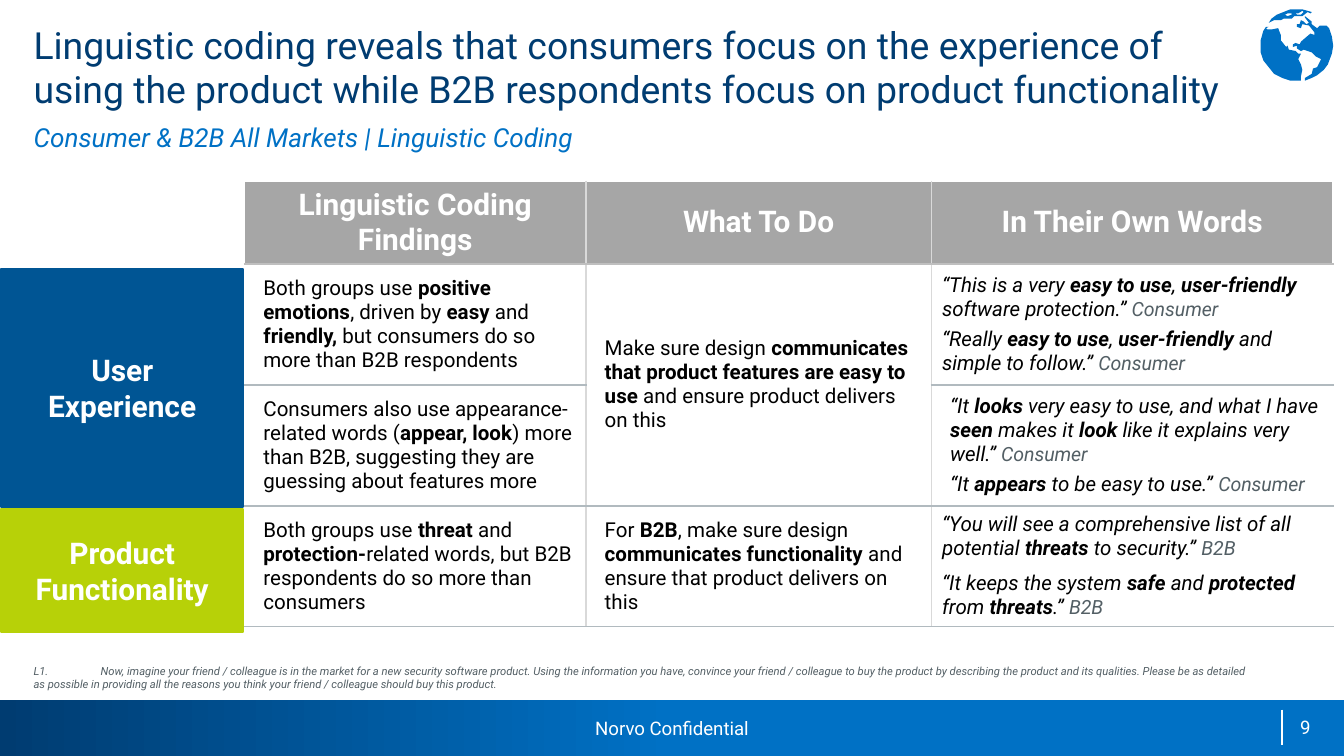
from lxml import etree
from pptx import Presentation
from pptx.dml.color import RGBColor
from pptx.enum.shapes import MSO_CONNECTOR, MSO_SHAPE
from pptx.enum.text import MSO_ANCHOR, PP_ALIGN
from pptx.oxml.ns import qn
from pptx.util import Inches, Pt

RECT, LINE = MSO_SHAPE.RECTANGLE, MSO_CONNECTOR.STRAIGHT
TOP, MID, LOW = MSO_ANCHOR.TOP, MSO_ANCHOR.MIDDLE, MSO_ANCHOR.BOTTOM
LEFT, CENTER, RIGHT = PP_ALIGN.LEFT, PP_ALIGN.CENTER, PP_ALIGN.RIGHT

THEME = dict(
    font="Roboto", navy="003C71", blue="0071C5", deep="005594", lime="B7D108",
    head="A6A6A6", side="D9D9D9", rule="B1BABF", under="BFBFBF",
    grey="535F65", white="FFFFFF", black="000000",
    title=20, sub=14, label=16, body=11, source=10.5, foot=10, note=6)

TITLE = ("Linguistic coding reveals that consumers focus on the experience of "
         "using the product while B2B respondents focus on product functionality")
SUB = "Consumer & B2B All Markets | Linguistic Coding"
NOTE = ["L1.\tNow, imagine your friend / colleague is in the market for a new security "
        "software product. Using the information you have, convince your friend / "
        "colleague to buy the product by describing the product and its qualities. "
        "Please be as detailed",
        "as possible in providing all the reasons you think your friend / colleague "
        "should buy this product."]
FOOT, PAGE = "Norvo Confidential", "9"

# label, top, height, colour
GROUPS = [("User Experience", 2, 1.77, "deep"),
          ("Product Functionality", 3.79, 0.91, "lime")]

HEADS = ["Linguistic Coding Findings", "What To Do", "In Their Own Words"]
COLS, ROWS = [2.54, 2.57, 2.99], [0.61, 0.9, 0.9, 0.9]

# Every second piece of a text is bold.
FINDINGS = [
    ["Both groups use ", "positive emotions", ", driven by ", "easy ", "and ",
     "friendly, ", "but consumers do so more than B2B respondents"],
    ["Consumers also use appearance- related words (", "appear, look",
     ") more than B2B, suggesting they are guessing about features more"],
    ["Both groups use ", "threat ", "and ", "protection-",
     "related words, but B2B respondents do so more than consumers"]]
ACTIONS = {
    1: ["Make sure design ", "communicates that product features are easy to use ",
        "and ensure product delivers on this"],
    3: ["For ", "B2B", ", make sure design ", "communicates functionality",
        " and ensure that product delivers on this"]}
# indent, space before, quotes with their speaker
QUOTES = [
    (0, 3, [(["“This is a very ", "easy to use", ", ", "user-friendly ",
              "software protection.”"], " Consumer"),
            (["“Really ", "easy to use", ", ", "user-friendly",
              " and simple to follow.” "], "Consumer")]),
    (0.06, 3, [(["“It ", "looks", " very easy to use, and what I have ", "seen",
                 " makes it ", "look", " like it explains very well.”"], " Consumer"),
               (["“It ", "appears", " to be easy to use.” "], "Consumer")]),
    (0, 6, [(["“You will see a comprehensive list of all potential ", "threats ",
              "to security.” "], "B2B"),
            (["“It keeps the system ", "safe", " and ", "protected", " from ",
              "threats", ".” "], "B2B")])]

# Outlines of the globe's land, in hundredths of an inch
GLOBE = [
    [[(971, 12), (976, 16), (976, 18), (980, 21), (982, 19), (987, 19), (989, 21),
      (991, 27), (992, 34), (991, 40), (988, 48), (985, 52), (980, 56), (976, 58),
      (971, 60), (971, 58), (976, 55), (977, 51), (980, 50), (983, 44), (979, 42),
      (976, 39), (970, 37), (968, 38), (965, 36), (965, 34), (962, 35), (962, 33),
      (964, 32), (967, 33), (968, 31), (975, 25), (978, 26), (978, 24), (974, 19),
      (969, 18), (968, 21), (965, 20), (965, 18), (967, 18), (968, 15), (970, 16),
      (972, 18), (974, 17), (971, 13)]],
    [[(944, 20), (942, 21), (943, 22), (946, 22), (951, 21), (953, 26), (953, 30),
      (957, 35), (958, 34), (959, 37), (964, 38), (966, 40), (968, 40), (966, 44),
      (968, 48), (969, 52), (968, 57), (968, 60), (960, 60), (954, 58), (948, 55),
      (944, 50), (940, 45), (938, 39), (938, 30), (940, 23), (942, 20)]],
    [[(958, 10), (956, 11), (958, 12), (961, 11), (961, 10)],
     [(969, 8), (966, 10), (964, 10), (965, 11), (968, 11), (970, 9)],
     [(965, 7), (969, 7), (976, 9), (975, 10), (973, 9), (969, 12), (963, 12),
      (961, 14), (955, 14), (953, 15), (948, 15), (944, 17), (946, 14), (950, 11),
      (955, 9), (960, 7)]]]


def rgb(name):
    return RGBColor.from_string(THEME[name])


def put(par, text, size, color, bold=False, italic=False):
    run = par.add_run()
    run.text = text
    font = run.font
    font.name, font.size = THEME["font"], Pt(THEME[size])
    font.bold, font.italic = bold, italic
    font.color.rgb = rgb(color)


def weave(par, parts, italic=False):
    """Add the parts, bold at every second one."""
    for i, part in enumerate(parts):
        put(par, part, "body", "black", i % 2 == 1, italic)


def frame(shape, anchor, pad):
    text = shape.text_frame
    text.word_wrap, text.vertical_anchor = True, anchor
    text.margin_left = text.margin_right = Inches(pad[0])
    text.margin_top = text.margin_bottom = Inches(pad[1])
    return text.paragraphs[0]


def label(slide, box, text, size, color, anchor=MID, align=LEFT, pad=(0, 0), italic=False):
    par = frame(slide.shapes.add_textbox(*map(Inches, box)), anchor, pad)
    par.alignment = align
    put(par, text, size, color, italic=italic)
    return par


def block(slide, box):
    shape = slide.shapes.add_shape(RECT, *map(Inches, box))
    shape.shadow.inherit = False
    return shape


def edge(cell, side, color):
    line = etree.SubElement(cell._tc.get_or_add_tcPr(), qn("a:" + side), w=str(Pt(1)))
    fill = etree.SubElement(line, qn("a:solidFill"))
    etree.SubElement(fill, qn("a:srgbClr"), val=THEME[color])


def indent(par, size):
    par._p.get_or_add_pPr().set("marL", str(Inches(size)))


def add_footer(slide):
    bar = block(slide, (0, 5.21, 10, 0.42))
    bar.line.fill.background()
    bar.fill.gradient()
    bar.fill.gradient_angle = 0
    for stop, color, spot in zip(bar.fill.gradient_stops, ("navy", "blue"), (0, 0.5)):
        stop.color.rgb, stop.position = rgb(color), spot
    rule = slide.shapes.add_connector(LINE, *map(Inches, (9.54, 5.28, 9.54, 5.54)))
    rule.line.color.rgb, rule.line.width = rgb("white"), Pt(0.75)
    etree.SubElement(rule._element.spPr, qn("a:effectLst"))
    label(slide, (3.25, 5.21, 3.5, 0.41), FOOT, "foot", "white", align=CENTER)
    label(slide, (7.52, 5.28, 2.33, 0.3), PAGE, "foot", "white", TOP, RIGHT, (0.1, 0.05))


def add_note(slide):
    par = label(slide, (0.25, 4.81, 9.5, 0.33), NOTE[0], "note", "grey", LOW, italic=True)
    tabs = etree.SubElement(par._p.get_or_add_pPr(), qn("a:tabLst"))
    etree.SubElement(tabs, qn("a:tab"), pos=str(Inches(0.5)), algn="l")
    par.add_line_break()
    put(par, NOTE[1], "note", "grey", italic=True)


def add_groups(slide):
    for text, top, high, color in GROUPS:
        shape = block(slide, (0.01, top, 1.8, high))
        shape.fill.solid()
        shape.fill.fore_color.rgb = shape.line.color.rgb = rgb(color)
        shape.line.width = Pt(1)
        par = frame(shape, MID, (0.2, 0.05))
        par.alignment = CENTER
        put(par, text, "label", "white", bold=True)


def add_grid(slide):
    box = map(Inches, (1.82, 1.35, sum(COLS), sum(ROWS)))
    grid = slide.shapes.add_table(len(ROWS), len(COLS), *box).table
    grid.first_row = grid.horz_banding = False
    for col, wide in zip(grid.columns, COLS):
        col.width = Inches(wide)
    for row, high in zip(grid.rows, ROWS):
        row.height = Inches(high)
    first = {}
    for r in range(len(ROWS)):
        for c in range(len(COLS)):
            cell = grid.cell(r, c)
            edge(cell, "lnL", "side" if c else "white")
            edge(cell, "lnR", "side" if c < len(COLS) - 1 else "white")
            edge(cell, "lnT", ("white", "under", "rule", "rule")[r])
            edge(cell, "lnB", "rule" if r else "under")
            if r:
                cell.fill.background()
            else:
                cell.fill.solid()
                cell.fill.fore_color.rgb = rgb("head")
            cell.vertical_anchor = MID
            cell.margin_left = cell.margin_right = Inches(0.08)
            cell.margin_top = cell.margin_bottom = Inches(0.04)
            first[r, c] = cell.text_frame.paragraphs[0]
    grid.cell(1, 1).merge(grid.cell(2, 1))

    for c, text in enumerate(HEADS):
        first[0, c].alignment = CENTER
        put(first[0, c], text, "label", "white", bold=True)
    texts = {(r, 0): parts for r, parts in enumerate(FINDINGS, 1)}
    texts.update({(r, 1): parts for r, parts in ACTIONS.items()})
    for spot, parts in texts.items():
        indent(first[spot], 0.06)
        weave(first[spot], parts)
    for r, (left, gap, quotes) in enumerate(QUOTES, 1):
        for i, (parts, who) in enumerate(quotes):
            par = grid.cell(r, 2).text_frame.add_paragraph() if i else first[r, 2]
            indent(par, left)
            if i:
                par.space_before = Pt(gap)
            weave(par, parts, italic=True)
            put(par, who, "source", "grey", italic=True)


def add_globe(slide):
    for loops in GLOBE:
        pen = slide.shapes.build_freeform(*loops[0][0], scale=Inches(0.01))
        for i, loop in enumerate(loops):
            if i:
                pen.move_to(*loop[0])
            pen.add_line_segments(loop[1:], close=True)
        land = pen.convert_to_shape()
        land.shadow.inherit = False
        land.fill.solid()
        land.fill.fore_color.rgb = rgb("blue")
        land.line.fill.background()


def main():
    deck = Presentation()
    deck.slide_width = Inches(10)
    deck.slide_height = deck.slide_width * 9 // 16
    slide = deck.slides.add_slide(deck.slide_layouts[6])
    add_footer(slide)
    label(slide, (0.25, 0.15, 9.14, 0.69), TITLE, "title", "navy")
    label(slide, (0.25, 0.77, 9.5, 0.5), SUB, "sub", "blue", italic=True)
    add_groups(slide)
    add_grid(slide)
    add_note(slide)
    add_globe(slide)
    deck.save("out.pptx")


if __name__ == "__main__":
    main()
